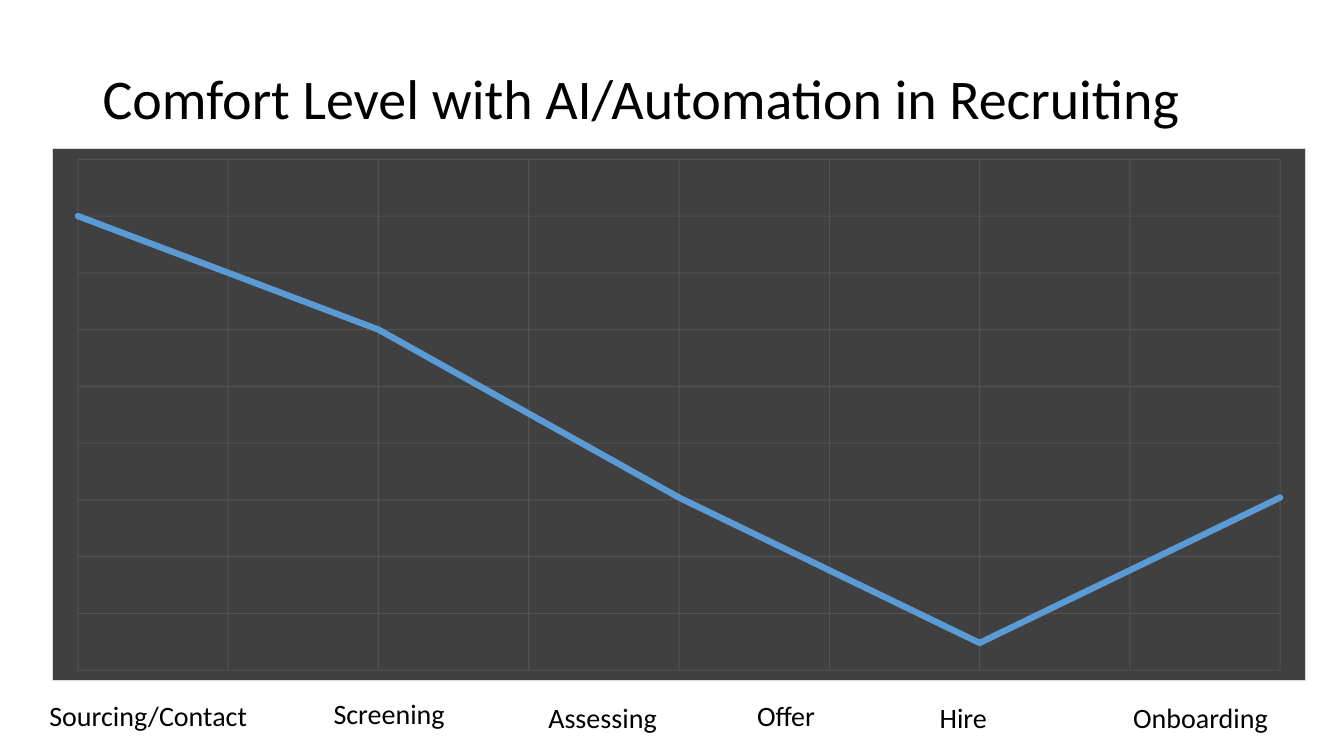
"""Build the slide on comfort with automation across the stages of recruiting."""
from typing import NamedTuple

from lxml.etree import SubElement
from pptx import Presentation
from pptx.chart.data import XyChartData
from pptx.dml.color import RGBColor
from pptx.enum.chart import XL_CHART_TYPE as ChartType, XL_MARKER_STYLE as Marker
from pptx.enum.text import MSO_ANCHOR as Anchor, MSO_AUTO_SIZE as AutoSize
from pptx.oxml import parse_xml
from pptx.oxml.ns import nsdecls, qn
from pptx.util import Inches, Pt

BLACK = RGBColor(0x00, 0x00, 0x00)
LINE_BLUE = RGBColor(0x5B, 0x9B, 0xD5)
MARKER_BLUE = RGBColor(0x9D, 0xC3, 0xE6)
GRID_GREY = RGBColor(0x59, 0x59, 0x59)
PANEL_GREY = "404040"
PANEL_EDGE = "D9D9D9"
FONT = "Calibri"
SLIDE_WIDTH, SLIDE_HEIGHT = Inches(13.33), Inches(7.5)


class Area(NamedTuple):
    """Place and size in percent of the slide."""
    left: float
    top: float
    width: float
    height: float

    def lengths(self) -> tuple:
        """Return the place and size as slide lengths."""
        return (int(SLIDE_WIDTH * self.left / 100), int(SLIDE_HEIGHT * self.top / 100),
                int(SLIDE_WIDTH * self.width / 100), int(SLIDE_HEIGHT * self.height / 100))


class Stage(NamedTuple):
    """A recruiting stage named below the chart."""
    name: str
    area: Area


STAGES = [
    Stage("Sourcing/Contact", Area(2.93, 91.73, 18.75, 5.87)),
    Stage("Screening", Area(24.08, 91.47, 13.58, 5.33)),
    Stage("Assessing", Area(40.06, 92, 13.58, 5.33)),
    Stage("Offer", Area(55.59, 91.73, 13.58, 5.33)),
    Stage("Hire", Area(69.17, 92, 9.6, 5.33)),
    Stage("Onboarding", Area(83.57, 92, 13.58, 5.87)),
]
COMFORT = [(6, 38), (5, 6), (4, 38), (3, 75), (2, 100)]
STAGE_SCALE = {"minimum_scale": 2, "maximum_scale": 6, "major_unit": 0.5}
COMFORT_SCALE = {"minimum_scale": 0, "maximum_scale": 112.5, "major_unit": 12.5}
AXIS_FORMAT = {"visible": False, "has_major_gridlines": True}
TITLE_FRAME = {"vertical_anchor": Anchor.MIDDLE}
LABEL_FRAME = {"auto_size": AutoSize.SHAPE_TO_FIT_TEXT}


def apply_format(target, values: dict) -> None:
    """Set each named attribute on the target."""
    for name, value in values.items():
        setattr(target, name, value)


def add_text(slide, wording: str, area: Area, size: int, frame_format: dict,
             line_spacing: float = 1.0) -> None:
    """Write one line of text in its area."""
    frame = slide.shapes.add_textbox(*area.lengths()).text_frame
    apply_format(frame, {"word_wrap": True, **frame_format})
    paragraph = frame.paragraphs[0]
    paragraph.text = wording
    paragraph.line_spacing = line_spacing
    font = paragraph.runs[0].font
    apply_format(font, {"name": FONT, "size": Pt(size)})
    font.color.rgb = BLACK


def format_axis(axis, scale: dict) -> None:
    """Hide the axis and draw its translucent gridlines."""
    apply_format(axis, {**AXIS_FORMAT, **scale})
    line = axis.major_gridlines.format.line
    line.width = Pt(0.75)
    line.color.rgb = GRID_GREY
    colour = axis.major_gridlines._xAx.find(".//" + qn("a:srgbClr"))
    SubElement(colour, qn("a:alpha"), val="75000")


def add_comfort_chart(slide, area: Area) -> None:
    """Plot the comfort level on a dark panel."""
    data = XyChartData()
    points = data.add_series("Series 1")
    for stage, comfort in COMFORT:
        points.add_data_point(stage, comfort)
    chart = slide.shapes.add_chart(ChartType.XY_SCATTER_LINES, *area.lengths(), data).chart
    apply_format(chart, {"has_legend": False, "has_title": False})
    apply_format(chart.font, {"name": FONT, "size": Pt(10)})
    chart.font.color.rgb = BLACK
    chart.plots[0].vary_by_categories = False
    format_axis(chart.category_axis, STAGE_SCALE)
    format_axis(chart.value_axis, COMFORT_SCALE)

    curve = chart.plots[0].series[0]
    curve.smooth = False
    curve.format.line.width = Pt(4.5)
    curve.format.line.color.rgb = LINE_BLUE
    curve._element.find(".//" + qn("a:ln")).set("cap", "rnd")
    apply_format(curve.marker, {"style": Marker.CIRCLE, "size": 3})
    curve.marker.format.fill.solid()
    curve.marker.format.fill.fore_color.rgb = MARKER_BLUE
    curve.marker.format.line.fill.background()

    panel = parse_xml(
        f'<c:spPr {nsdecls("c", "a")}>'
        f'<a:solidFill><a:srgbClr val="{PANEL_GREY}"/></a:solidFill>'
        f'<a:ln w="{Pt(0.75)}"><a:solidFill><a:srgbClr val="{PANEL_EDGE}"/></a:solidFill></a:ln>'
        '</c:spPr>')
    chart._chartSpace.find(qn("c:chart")).addnext(panel)


def main() -> None:
    """Assemble and save the slide."""
    deck = Presentation()
    apply_format(deck, {"slide_width": SLIDE_WIDTH, "slide_height": SLIDE_HEIGHT})
    slide = deck.slides.add_slide(deck.slide_layouts[6])
    add_text(slide, "Comfort Level with AI/Automation in Recruiting",
             Area(6.9, 5.33, 86.27, 16.27), 40, TITLE_FRAME, 0.9)
    add_comfort_chart(slide, Area(3.9, 19.6, 93.25, 70.53))
    for stage in STAGES:
        add_text(slide, stage.name, stage.area, 20, LABEL_FRAME)
    deck.save("out.pptx")


if __name__ == "__main__":
    main()
